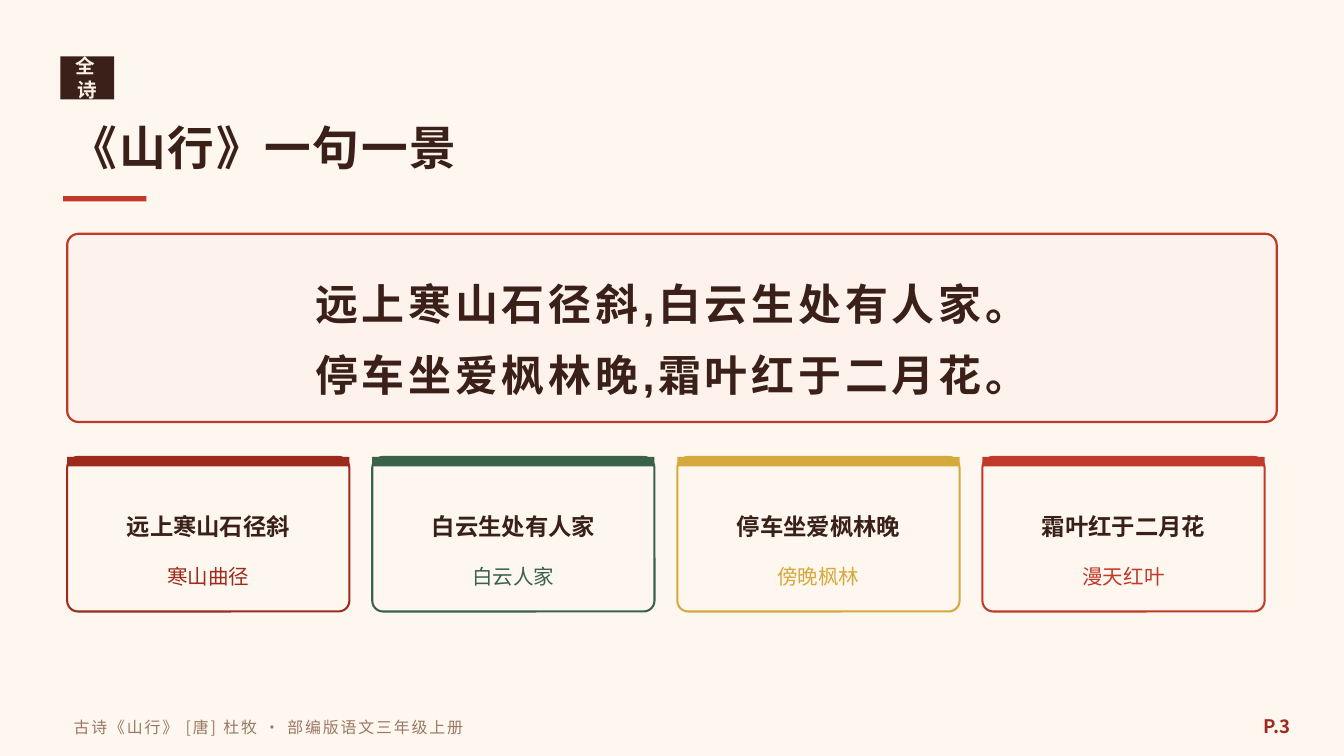
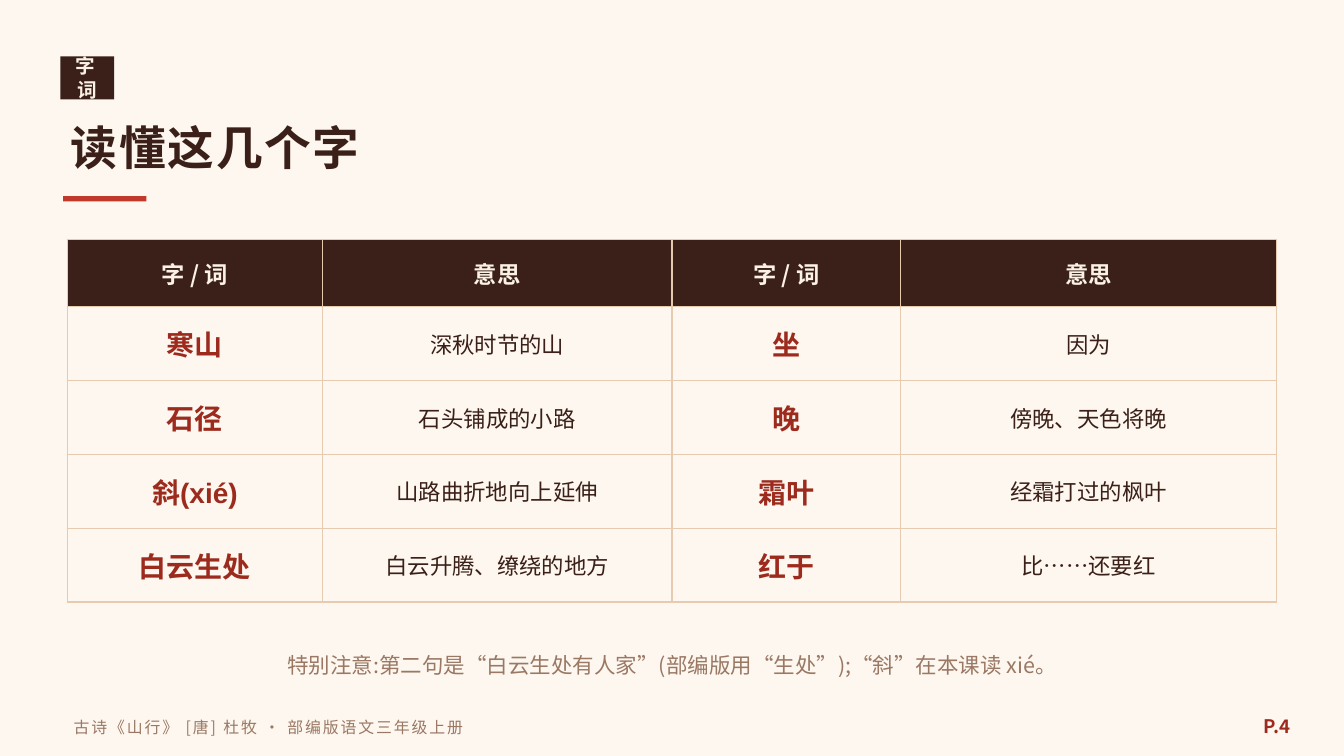
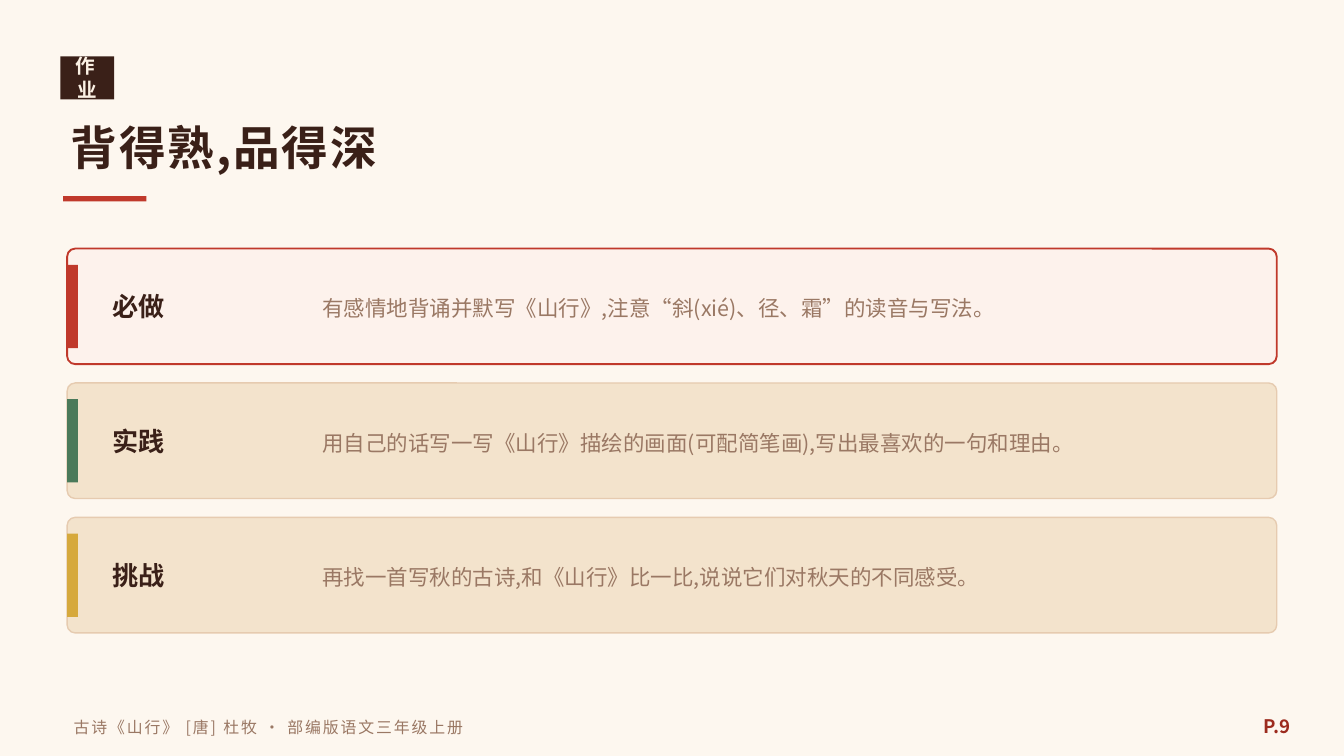
from dataclasses import dataclass
from typing import Optional

from lxml.etree import SubElement
from pptx import Presentation
from pptx.dml.color import RGBColor
from pptx.enum.shapes import MSO_SHAPE as Shape
from pptx.enum.text import MSO_ANCHOR as Anchor, PP_ALIGN as Align
from pptx.oxml.ns import qn
from pptx.util import Inches, Pt

COLORS = {
    "paper": "FDF7EF", "ink": "3A2018", "cream": "FBF1E4", "red": "C0392B",
    "crimson": "9C2B1E", "pine": "3A6248", "green": "4A7A5A", "gold": "D6A93C",
    "blush": "FDF2EC", "sand": "F3E3CC", "border": "E6CBB0", "muted": "9A7864",
}
CJK, LATIN = "Noto Sans CJK SC", "Arial"
FOOTER = "古诗《山行》 [唐] 杜牧 · 部编版语文三年级上册"
LEFT, WIDTH = 0.5, 9


@dataclass(frozen=True)
class Style:
    size: float
    color: str
    bold: bool = False
    font: str = CJK
    align: Align = Align.LEFT
    tracking: int = 0
    line_height: Optional[int] = None


@dataclass(frozen=True)
class SceneCard:
    verse: str
    scene: str
    color: str


@dataclass(frozen=True)
class Task:
    label: str
    detail: str
    accent: str
    fill: str = "sand"
    border: str = "border"
    border_width: float = 0.75


TAG = Style(10.5, "cream", True, align=Align.CENTER, tracking=2)
TITLE = Style(25, "ink", True, tracking=1)
FOOT = Style(8.5, "muted", tracking=1)
PAGE = Style(10, "crimson", True, align=Align.RIGHT)
POEM = Style(23, "ink", True, LATIN, Align.CENTER, 2, 38)
VERSE = Style(12.5, "ink", True, LATIN, Align.CENTER, line_height=16)
HEAD = Style(12.5, "cream", True, align=Align.CENTER)
WORD = Style(15, "crimson", True, LATIN, Align.CENTER)
MEANING = Style(12, "ink", align=Align.CENTER)
NOTE = Style(11.5, "muted", align=Align.CENTER)
TASK_LABEL = Style(14, "ink", True)
TASK_DETAIL = Style(11.5, "muted", line_height=16)

POEM_LINES = ["远上寒山石径斜,白云生处有人家。", "停车坐爱枫林晚,霜叶红于二月花。"]
SCENES = [
    SceneCard("远上寒山石径斜", "寒山曲径", "crimson"),
    SceneCard("白云生处有人家", "白云人家", "pine"),
    SceneCard("停车坐爱枫林晚", "傍晚枫林", "gold"),
    SceneCard("霜叶红于二月花", "漫天红叶", "red"),
]
GLOSSARY = [
    ["字 / 词", "意思", "字 / 词", "意思"],
    ["寒山", "深秋时节的山", "坐", "因为"],
    ["石径", "石头铺成的小路", "晚", "傍晚、天色将晚"],
    ["斜(xié)", "山路曲折地向上延伸", "霜叶", "经霜打过的枫叶"],
    ["白云生处", "白云升腾、缭绕的地方", "红于", "比……还要红"],
]
READING_NOTE = "特别注意:第二句是“白云生处有人家”(部编版用“生处”);“斜”在本课读 xié。"
TASKS = [
    Task("必做", "有感情地背诵并默写《山行》,注意“斜(xié)、径、霜”的读音与写法。",
         "red", "blush", "red", 1),
    Task("实践", "用自己的话写一写《山行》描绘的画面(可配简笔画),写出最喜欢的一句和理由。",
         "green"),
    Task("挑战", "再找一首写秋的古诗,和《山行》比一比,说说它们对秋天的不同感受。", "gold"),
]


def rgb(name: str) -> RGBColor:
    return RGBColor.from_string(COLORS[name])


def write(frame, lines: list[str], style: Style) -> None:
    """Fill a text frame, one paragraph per line."""
    for i, line in enumerate(lines):
        paragraph = frame.paragraphs[0] if i == 0 else frame.add_paragraph()
        paragraph.alignment = style.align
        if style.line_height:
            paragraph.line_spacing = Pt(style.line_height)
        run = paragraph.add_run()
        run.text = line
        run.font.size = Pt(style.size)
        run.font.bold = style.bold
        run.font.color.rgb = rgb(style.color)
        run.font.name = style.font
        properties = run.font._element
        SubElement(properties, qn("a:ea"), typeface=CJK)
        if style.tracking:
            properties.set("spc", str(style.tracking * 100))


def add_text(slide, x: float, y: float, w: float, h: float,
             style: Style, *lines: str) -> None:
    frame = slide.shapes.add_textbox(Inches(x), Inches(y), Inches(w), Inches(h)).text_frame
    frame.word_wrap = True
    frame.vertical_anchor = Anchor.MIDDLE
    write(frame, list(lines), style)


def add_block(slide, x: float, y: float, w: float, h: float, fill: str,
              border: Optional[str] = None, border_width: float = 1,
              rounding: float = 0) -> None:
    """Draw a rectangle, with rounded corners if rounding is given."""
    kind = Shape.ROUNDED_RECTANGLE if rounding else Shape.RECTANGLE
    block = slide.shapes.add_shape(kind, Inches(x), Inches(y), Inches(w), Inches(h))
    block.shadow.inherit = False
    if rounding:
        block.adjustments[0] = rounding
    block.fill.solid()
    block.fill.fore_color.rgb = rgb(fill)
    if border:
        block.line.color.rgb = rgb(border)
        block.line.width = Pt(border_width)
    else:
        block.line.fill.background()


def add_page(deck, tag: str, title: str, number: int):
    """Add a slide with the shared tag, title, rule and footer."""
    slide = deck.slides.add_slide(deck.slide_layouts[6])
    slide.background.fill.solid()
    slide.background.fill.fore_color.rgb = rgb("paper")
    add_block(slide, 0.45, 0.42, 0.4, 0.32, "ink")
    add_text(slide, 0.45, 0.41, 0.4, 0.34, TAG, tag)
    add_text(slide, 0.43, 0.78, 9, 0.62, TITLE, title)
    add_block(slide, 0.47, 1.46, 0.62, 0.04, "red")
    add_text(slide, 0.45, 5.26, 6.8, 0.3, FOOT, FOOTER)
    add_text(slide, 9.1, 5.24, 0.6, 0.32, PAGE, f"P.{number}")
    return slide


def outline_cell(cell) -> None:
    properties = cell._tc.get_or_add_tcPr()
    for side in ("lnL", "lnR", "lnT", "lnB"):
        line = SubElement(properties, qn(f"a:{side}"), w=str(Pt(0.75)))
        solid = SubElement(line, qn("a:solidFill"))
        SubElement(solid, qn("a:srgbClr"), val=COLORS["border"])


def add_glossary(slide, y: float, columns: list[float], rows: list[float]) -> None:
    table = slide.shapes.add_table(
        len(rows), len(columns), Inches(LEFT), Inches(y),
        Inches(sum(columns)), Inches(sum(rows))).table
    for column, width in zip(table.columns, columns):
        column.width = Inches(width)
    for r, (entries, height) in enumerate(zip(GLOSSARY, rows)):
        table.rows[r].height = Inches(height)
        for c, entry in enumerate(entries):
            cell = table.cell(r, c)
            outline_cell(cell)
            cell.fill.solid()
            cell.fill.fore_color.rgb = rgb("paper" if r else "ink")
            cell.vertical_anchor = Anchor.MIDDLE
            style = HEAD if r == 0 else (WORD, MEANING)[c % 2]
            write(cell.text_frame, [entry], style)


def add_scene(slide, x: float, y: float, card: SceneCard) -> None:
    width = 2.1
    add_block(slide, x, y, width, 1.15, "paper", card.color, 1.1, 0.07)
    add_block(slide, x, y, width, 0.07, card.color)
    add_text(slide, x, y + 0.16, width, 0.7, VERSE, card.verse)
    scene_style = Style(11, card.color, align=Align.CENTER)
    add_text(slide, x, y + 0.72, width, 0.34, scene_style, card.scene)


def add_task(slide, y: float, task: Task) -> None:
    add_block(slide, LEFT, y, WIDTH, 0.86, task.fill, task.border, task.border_width, 0.07)
    add_block(slide, LEFT, y + 0.12, 0.08, 0.62, task.accent)
    add_text(slide, 0.74, y + 0.1, 1.4, 0.66, TASK_LABEL, task.label)
    add_text(slide, 2.3, y + 0.08, 7, 0.7, TASK_DETAIL, task.detail)


def main() -> None:
    deck = Presentation()
    deck.slide_width = Inches(10)
    deck.slide_height = Inches(10) * 9 // 16

    poem = add_page(deck, "全诗", "《山行》一句一景", 3)
    add_block(poem, LEFT, 1.74, WIDTH, 1.4, "blush", "red", 1.2, 0.06)
    add_text(poem, 0.6, 1.86, 8.8, 1.18, POEM, *POEM_LINES)
    for i, card in enumerate(SCENES):
        add_scene(poem, LEFT + i * 2.27, 3.4, card)

    words = add_page(deck, "字词", "读懂这几个字", 4)
    add_glossary(words, 1.78, [1.9, 2.6, 1.7, 2.8], [0.5] + [0.55] * 4)
    add_text(words, LEFT, 4.72, WIDTH, 0.45, NOTE, READING_NOTE)

    homework = add_page(deck, "作业", "背得熟,品得深", 9)
    for i, task in enumerate(TASKS):
        add_task(homework, 1.85 + i, task)

    deck.save("out.pptx")


if __name__ == "__main__":
    main()
